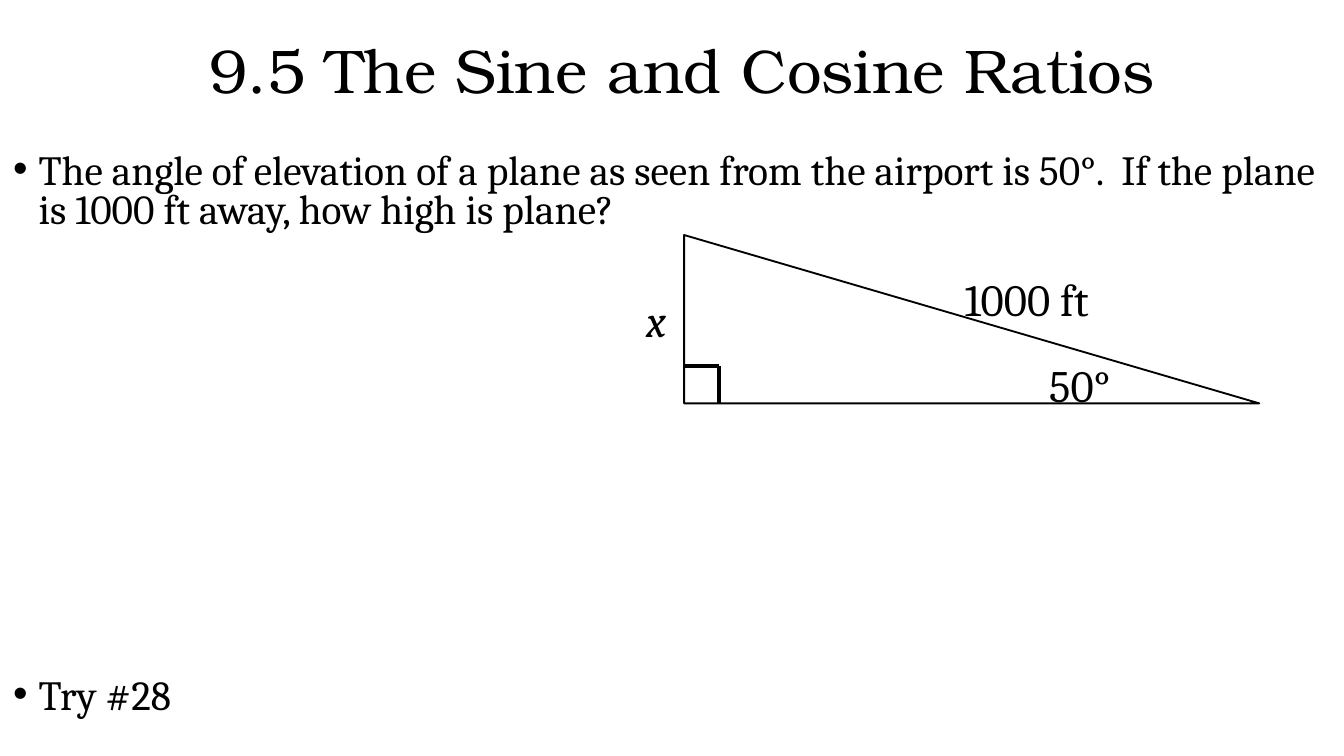
"""Build a slide on the sine ratio with a right triangle and its labels."""
import pptx
import pptx.dml.color
import pptx.enum.shapes
import pptx.enum.text
import pptx.oxml.ns
import pptx.util
from lxml import etree

Cm = pptx.util.Cm
Pt = pptx.util.Pt
COLORS = {"ink": "000000", "paper": "FFFFFF"}
INK = pptx.dml.color.RGBColor.from_string(COLORS["ink"])

deck = pptx.Presentation()
deck.slide_width, deck.slide_height = Cm(25.4), Cm(14.28)
slide = deck.slides.add_slide(deck.slide_layouts[6])
slide.background.fill.solid()
slide.background.fill.fore_color.rgb = pptx.dml.color.RGBColor.from_string(COLORS["paper"])


def add_text(paragraphs, left, top, width, height, size=24, font="Cambria",
             italic=False, anchor="TOP", spacing=1.0, gap=0, bullet=None):
    """Add a text box holding one paragraph per given string."""
    frame = slide.shapes.add_textbox(Cm(left), Cm(top), Cm(width), Cm(height)).text_frame
    frame.word_wrap = True
    frame.vertical_anchor = getattr(pptx.enum.text.MSO_ANCHOR, anchor)
    for index, text in enumerate(paragraphs):
        paragraph = frame.paragraphs[0] if index == 0 else frame.add_paragraph()
        paragraph.line_spacing = spacing
        if index:
            paragraph.space_before = Pt(gap)
        if bullet:
            properties = paragraph._p.get_or_add_pPr()
            properties.set("marL", str(Cm(0.48)))
            properties.set("indent", str(-Cm(0.48)))
            etree.SubElement(properties, pptx.oxml.ns.qn("a:buFont")).set("typeface", "Arial")
            etree.SubElement(properties, pptx.oxml.ns.qn("a:buChar")).set("char", bullet)
        run = paragraph.add_run()
        run.text = text
        run.font.size, run.font.name = Pt(size), font
        run.font.italic = italic
        run.font.color.rgb = INK


add_text(["9.5 The Sine and Cosine Ratios"], 3.71, 0, 21.69, 2.77,
         size=33, font="TeX Gyre Bonum", anchor="MIDDLE", spacing=0.9)
add_text(["The angle of elevation of a plane as seen from the airport is 50°.  "
          "If the plane is 1000 ft away, how high is plane?", "Try #28"],
         0, 2.77, 25.4, 11.51, size=22.2, spacing=0.8, gap=238.7, bullet="•")

corner_x, base_y = 12.93, 7.62
triangle_width, triangle_height = 10.87, 3.18
triangle = slide.shapes.add_shape(
    pptx.enum.shapes.MSO_SHAPE.RIGHT_TRIANGLE, Cm(corner_x), Cm(base_y - triangle_height),
    Cm(triangle_width), Cm(triangle_height))
triangle.shadow.inherit = False
triangle.fill.background()
triangle.line.color.rgb = INK
triangle.line.width = Pt(1)

add_text(["50°"], 19.58, 6.63, 1.91, 1.27)
add_text(["x"], 11.96, 5.41, 0.79, 1.27, italic=True)
add_text(["1000 ft"], 17.98, 5, 3.07, 2.31)

mark_x, mark_y = corner_x + 0.66, base_y - 0.7
for start_x, start_y, end_x, end_y in [(mark_x, base_y, mark_x, mark_y),
                                       (mark_x, mark_y, corner_x, mark_y)]:
    right_angle_side = slide.shapes.add_connector(
        pptx.enum.shapes.MSO_CONNECTOR.STRAIGHT,
        Cm(start_x), Cm(start_y), Cm(end_x), Cm(end_y))
    right_angle_side.line.color.rgb = INK
    right_angle_side.line.width = Pt(2.25)
    etree.SubElement(right_angle_side._element.spPr, pptx.oxml.ns.qn("a:effectLst"))

deck.save("out.pptx")
